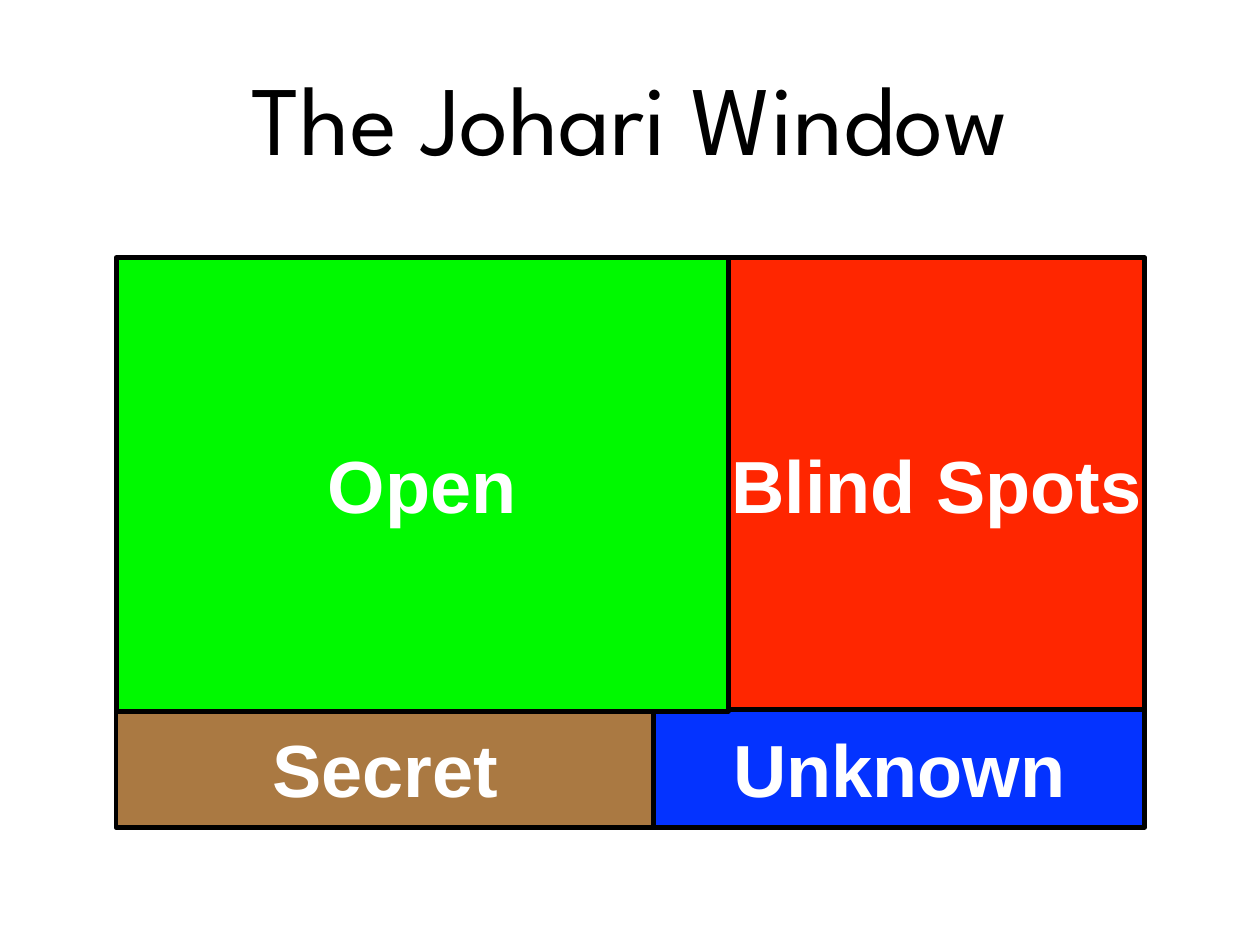
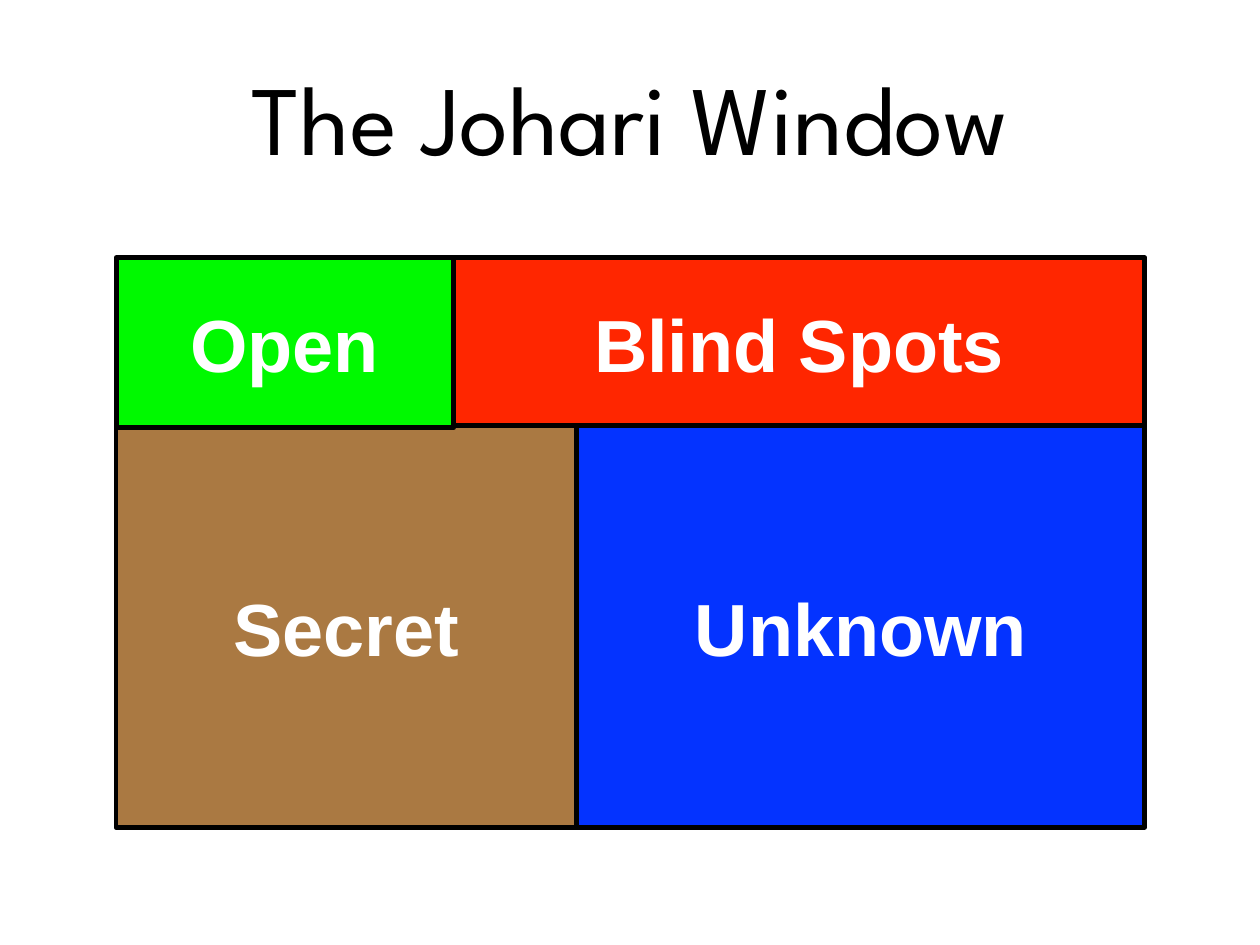
from pptx import Presentation
from pptx.dml.color import RGBColor
from pptx.enum.shapes import MSO_SHAPE
from pptx.enum.text import MSO_ANCHOR, MSO_AUTO_SIZE, PP_ALIGN
from pptx.util import Inches, Pt

BLACK = RGBColor(0x00, 0x00, 0x00)
WHITE = RGBColor(0xFF, 0xFF, 0xFF)
GREEN = RGBColor(0x00, 0xF9, 0x00)
RED = RGBColor(0xFF, 0x26, 0x00)
BROWN = RGBColor(0xAA, 0x79, 0x42)
BLUE = RGBColor(0x04, 0x33, 0xFF)

TITLE = "The Johari Window"
TITLE_BOX = (1.39, 0.38, 11.44, 1.66)
WINDOW_BOX = (1.31, 2.91, 11.61, 6.43)
ROW_OVERLAP = 0.02

# Per slide, from the window's corner: upper pane split, lower pane split, row split
SPLITS = [
    (6.91, 6.07, 5.1),
    (3.81, 5.2, 1.9),
]


def format_text(frame, text, anchor, font_name, size, color, bold=False):
    frame.text = text
    frame.vertical_anchor = anchor
    frame.auto_size = MSO_AUTO_SIZE.NONE
    frame.margin_left = frame.margin_right = Inches(0.06)
    frame.margin_top = frame.margin_bottom = Inches(0.06)
    paragraph = frame.paragraphs[0]
    paragraph.alignment = PP_ALIGN.CENTER
    paragraph.font.name = font_name
    paragraph.font.size = Pt(size)
    paragraph.font.bold = bold
    paragraph.font.color.rgb = color


def add_title(slide, box):
    title = slide.shapes.title
    title.left, title.top, title.width, title.height = map(Inches, box)
    format_text(title.text_frame, TITLE, MSO_ANCHOR.BOTTOM,
                "League Spartan", 80, BLACK)


def add_pane(slide, label, color, box):
    pane = slide.shapes.add_shape(MSO_SHAPE.RECTANGLE, *map(Inches, box))
    pane.shadow.inherit = False
    pane.fill.solid()
    pane.fill.fore_color.rgb = color
    pane.line.color.rgb = BLACK
    pane.line.width = Pt(4)
    format_text(pane.text_frame, label, MSO_ANCHOR.MIDDLE,
                "Arial", 60, WHITE, bold=True)
    pane.text_frame.word_wrap = False


def add_window(slide, box, upper_split, lower_split, row_split):
    left, top, width, height = box
    upper_height = row_split + ROW_OVERLAP
    lower_top, lower_height = top + row_split, height - row_split
    # The open pane comes last, so its border lies over its neighbours
    add_pane(slide, "Blind Spots", RED,
             (left + upper_split, top, width - upper_split, upper_height))
    add_pane(slide, "Secret", BROWN,
             (left, lower_top, lower_split, lower_height))
    add_pane(slide, "Unknown", BLUE,
             (left + lower_split, lower_top, width - lower_split, lower_height))
    add_pane(slide, "Open", GREEN, (left, top, upper_split, upper_height))


def main():
    prs = Presentation()
    prs.slide_width, prs.slide_height = Inches(14.22), Inches(10.67)
    title_only = prs.slide_layouts[5]
    for splits in SPLITS:
        slide = prs.slides.add_slide(title_only)
        add_title(slide, TITLE_BOX)
        add_window(slide, WINDOW_BOX, *splits)
    prs.save("out.pptx")


if __name__ == "__main__":
    main()
